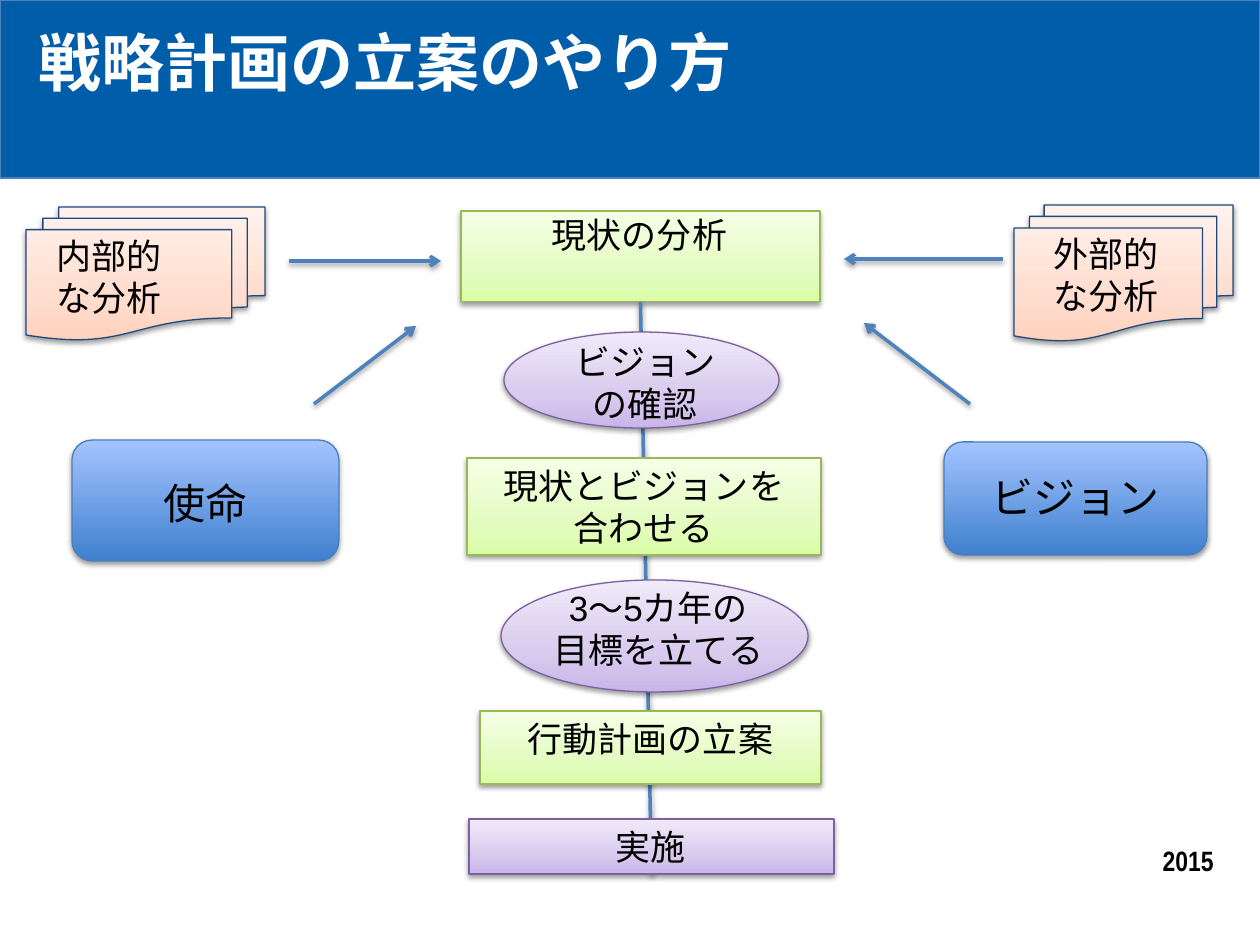
from lxml.etree import SubElement
from pptx import Presentation
from pptx.dml.color import RGBColor
from pptx.enum.shapes import MSO_CONNECTOR, MSO_SHAPE as SHAPE
from pptx.enum.text import MSO_ANCHOR, PP_ALIGN as ALIGN
from pptx.oxml.ns import qn
from pptx.util import Emu, Pt

PX = 914400 / 126
WHITE = RGBColor(0xFF, 0xFF, 0xFF)
BLACK = RGBColor(0x00, 0x00, 0x00)
BAND_BLUE = RGBColor(0x00, 0x5D, 0xAA)
LINE_BLUE = RGBColor(0x4F, 0x81, 0xBD)
GOAL_EDGE = RGBColor(0x4B, 0x7E, 0xBC)
PAPER_EDGE = RGBColor(0x1F, 0x49, 0x7D)
GREEN_EDGE = RGBColor(0x98, 0xB9, 0x55)
PURPLE_EDGE = RGBColor(0x7D, 0x60, 0xA0)
GOAL_FILL = {0: RGBColor(0x3F, 0x80, 0xCE), 100: RGBColor(0xA4, 0xC4, 0xFF)}
PAPER_FILL = {0: RGBColor(0xFF, 0xD2, 0xBD), 35: RGBColor(0xFF, 0xDE, 0xD0),
              100: RGBColor(0xFF, 0xF2, 0xED)}
GREEN_FILL = {0: RGBColor(0xDA, 0xFD, 0xA7), 35: RGBColor(0xE4, 0xFC, 0xC2),
              100: RGBColor(0xF5, 0xFF, 0xE7)}
PURPLE_FILL = {0: RGBColor(0xC9, 0xB5, 0xE8), 35: RGBColor(0xD8, 0xCB, 0xEE),
               100: RGBColor(0xF0, 0xEA, 0xF9)}
BLUE, PAPER = (GOAL_FILL, GOAL_EDGE), (PAPER_FILL, PAPER_EDGE)
GREEN, PURPLE = (GREEN_FILL, GREEN_EDGE), (PURPLE_FILL, PURPLE_EDGE)


def emu(*lengths):
    """Turn px lengths into EMU."""
    return [Emu(round(length * PX)) for length in lengths]


def inside(box, left, top, width, height):
    """Place a part relative to the corner of a box."""
    return box[0] + left, box[1] + top, width, height


def cast_shadow(effects):
    """Add a soft shadow below to an effect list."""
    shadow = SubElement(effects, qn("a:outerShdw"), blurRad=str(Pt(3.1)), dist=str(Pt(1.6)),
                        dir="5400000", rotWithShape="0")
    black = SubElement(shadow, qn("a:srgbClr"), val=str(BLACK))
    SubElement(black, qn("a:alpha"), val="38000")


def write(shape, text, size, font="Cambria", color=BLACK, align=ALIGN.CENTER, bold=False):
    """Write one paragraph at the top of a shape and return it."""
    frame = shape.text_frame
    frame.word_wrap = True
    frame.vertical_anchor = MSO_ANCHOR.TOP
    paragraph = frame.paragraphs[0]
    paragraph.text = text
    paragraph.alignment = align
    paragraph.font.name = font
    paragraph.font.size = Pt(size)
    paragraph.font.bold = bold
    paragraph.font.color.rgb = color
    return paragraph


def add_label(slide, box, text, size, **style):
    """Add a text box and return its paragraph."""
    return write(slide.shapes.add_textbox(*emu(*box)), text, size, **style)


def add_panel(slide, kind, box, look):
    """Add a shadowed shape with an upward gradient."""
    stops, edge = look
    panel = slide.shapes.add_shape(kind, *emu(*box))
    panel.fill.gradient()
    panel.fill.gradient_angle = 90
    stop_list = panel._element.spPr.find(qn("a:gradFill")).find(qn("a:gsLst"))
    stop_list.clear()
    for position, color in stops.items():
        stop = SubElement(stop_list, qn("a:gs"), pos=str(position * 1000))
        SubElement(stop, qn("a:srgbClr"), val=str(color))
    panel.line.color.rgb = edge
    panel.line.width = Pt(0.75)
    panel.shadow.inherit = False
    cast_shadow(panel._element.spPr.find(qn("a:effectLst")))
    return panel


def add_line(slide, start, end, arrow=True):
    """Add a shadowed line, with an open arrowhead at its end if asked."""
    line = slide.shapes.add_connector(MSO_CONNECTOR.STRAIGHT, *emu(*start, *end))
    line.line.color.rgb = LINE_BLUE
    line.line.width = Pt(2)
    properties = line._element.spPr
    if arrow:
        SubElement(properties.find(qn("a:ln")), qn("a:tailEnd"), type="arrow")
    cast_shadow(SubElement(properties, qn("a:effectLst")))
    return line


def add_header(slide, box, title):
    """Draw the title band."""
    band = slide.shapes.add_shape(SHAPE.RECTANGLE, *emu(*box))
    band.fill.solid()
    band.fill.fore_color.rgb = BAND_BLUE
    band.line.color.rgb = LINE_BLUE
    band.line.width = Pt(0.75)
    band.shadow.inherit = False
    heading = add_label(slide, inside(box, 26, 32, 1208, 121), title, 36,
                        font="Arial Narrow", color=WHITE, align=ALIGN.LEFT, bold=True)
    heading.line_spacing = 0.8


def add_analysis(slide, box, text, text_left, arrow_start, arrow_end):
    """Draw a stack of papers and its level arrow."""
    add_panel(slide, SHAPE.FLOWCHART_MULTIDOCUMENT, box, PAPER)
    add_label(slide, inside(box, text_left, 21, 160, 97), text, 20, align=ALIGN.LEFT)
    left, top = box[:2]
    add_line(slide, (left + arrow_start, top + 54), (left + arrow_end, top + 54))


def add_goal(slide, box, text, text_top, arrow_start, arrow_end):
    """Draw a rounded goal box and its slanted arrow."""
    add_panel(slide, SHAPE.FLOWCHART_ALTERNATE_PROCESS, box, BLUE)
    add_label(slide, inside(box, 0, text_top, box[2], 63), text, 24)
    left, top = box[:2]
    add_line(slide, (left + arrow_start[0], top + arrow_start[1]),
             (left + arrow_end[0], top + arrow_end[1]))


def add_flow(slide, box):
    """Draw the column of planning steps on its spine."""
    rect, oval = SHAPE.RECTANGLE, SHAPE.OVAL
    steps = [
        (rect, GREEN, (0, 0, 359, 91), "現状の分析", (9, -4, 339, 55), "Cambria"),
        (oval, PURPLE, (43, 121, 275, 96), "ビジョンの確認", (90, 123, 189, 97), "Cambria"),
        (rect, GREEN, (6, 247, 354, 97), "現状とビジョンを\v合わせる", None, "Cambria"),
        (oval, PURPLE, (40, 369, 307, 112), "3～5カ年の\v目標を立てる", (77, 369, 241, 97), "Arial"),
        (rect, GREEN, (19, 500, 341, 73), "行動計画の立案", (19, 500, 341, 55), "Cambria"),
        (rect, PURPLE, (8, 608, 365, 55), "実施", (19, 608, 341, 55), "Cambria"),
    ]
    spine = None
    for kind, look, place, text, text_place, font in steps:
        step = add_panel(slide, kind, inside(box, *place), look)
        if text_place:
            add_label(slide, inside(box, *text_place), text, 20, font=font)
        else:
            write(step, text, 20, font=font)
        if spine is None:
            spine = add_line(slide, (box[0] + 180, box[1] + 91),
                             (box[0] + 190, box[1] + 663), arrow=False)
            spine.begin_connect(step, 2)
    spine.end_connect(step, 2)


def main():
    """Build the strategic planning slide."""
    deck = Presentation()
    deck.slide_width, deck.slide_height = emu(1260, 945)
    slide = deck.slides.add_slide(deck.slide_layouts[6])
    add_label(slide, (1045, 837, 181, 47), "2015", 16,
              font="Arial Narrow", align=ALIGN.RIGHT, bold=True)
    add_header(slide, (0, 0, 1260, 178), "戦略計画の立案のやり方")
    add_goal(slide, (944, 442, 263, 113), "ビジョン", 23, (26, -38), (-80, -119))
    add_goal(slide, (72, 440, 267, 121), "使命", 31, (242, -36), (344, -114))
    add_analysis(slide, (26, 207, 239, 133), "内部的な分析", 18, 263, 415)
    add_analysis(slide, (1014, 205, 219, 136), "外部的な分析", 27, -11, -170)
    add_flow(slide, (461, 211, 373, 664))
    deck.save("out.pptx")


if __name__ == "__main__":
    main()
